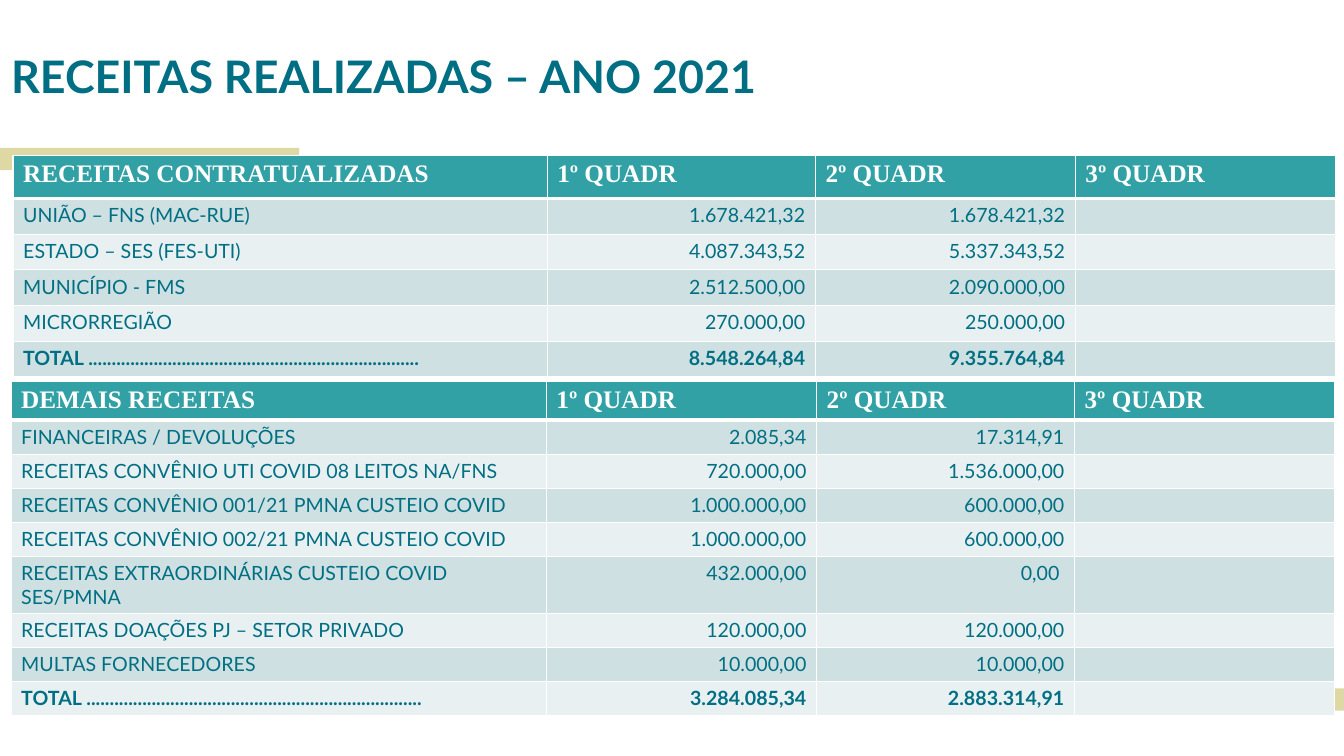
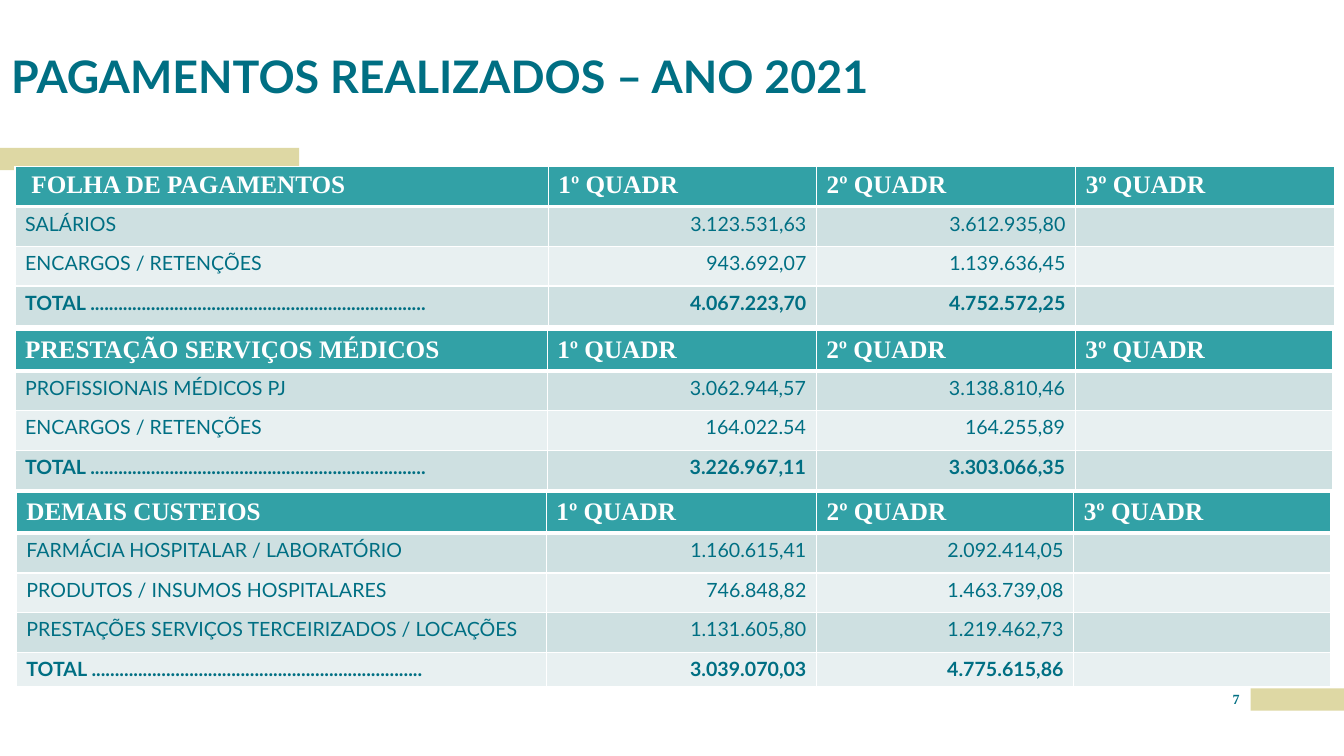
from lxml import etree
from pptx import Presentation
from pptx.dml.color import RGBColor
from pptx.enum import shapes, text
from pptx.oxml.ns import qn
from pptx.util import Cm, Pt

TEAL = RGBColor(0x32, 0xA1, 0xA6)
DARK_TEAL = RGBColor(0x00, 0x6F, 0x83)
SAND = RGBColor(0xDE, 0xD8, 0xA4)
WHITE = RGBColor(0xFF, 0xFF, 0xFF)
BANDS = RGBColor(0xCE, 0xE0, 0xE1), RGBColor(0xE8, 0xF0, 0xF1)
BODY_FONT, HEAD_FONT = "Lato", "Times New Roman"

QUARTERS = ["1º QUADR", "2º QUADR", "3º QUADR"]
SAND_BARS = [(31.52, 17.35, 2.35, 0.56), (0, 3.73, 7.54, 0.56)]

# Lengths in cm; "heights" holds header, body and total rows
SLIDES = [
    {
        "title": "RECEITAS REALIZADAS – ANO 2021",
        "number": None,
        "tables": [
            {
                "head": "RECEITAS CONTRATUALIZADAS",
                "at": (0.33, 3.91),
                "widths": (13.46, 6.76, 6.55, 6.55),
                "heights": (1.09, 0.9, 0.9),
                "rows": [
                    ("UNIÃO – FNS (MAC-RUE)", "1.678.421,32", "1.678.421,32"),
                    ("ESTADO – SES (FES-UTI)", "4.087.343,52", "5.337.343,52"),
                    ("MUNICÍPIO - FMS", "2.512.500,00", "2.090.000,00"),
                    ("MICRORREGIÃO", "270.000,00", "250.000,00"),
                ],
                "total": (71, "8.548.264,84", "9.355.764,84"),
            },
            {
                "head": "DEMAIS RECEITAS",
                "at": (0.28, 9.6),
                "widths": (13.49, 6.81, 6.5, 6.55),
                "heights": (0.99, 0.85, 0.85),
                "rows": [
                    ("FINANCEIRAS / DEVOLUÇÕES", "2.085,34", "17.314,91"),
                    ("RECEITAS CONVÊNIO UTI COVID 08 LEITOS NA/FNS",
                     "720.000,00", "1.536.000,00"),
                    ("RECEITAS CONVÊNIO 001/21 PMNA CUSTEIO COVID",
                     "1.000.000,00", "600.000,00"),
                    ("RECEITAS CONVÊNIO 002/21 PMNA CUSTEIO COVID",
                     "1.000.000,00", "600.000,00"),
                    ("RECEITAS EXTRAORDINÁRIAS CUSTEIO COVID SES/PMNA",
                     "432.000,00", "0,00 "),
                    ("RECEITAS DOAÇÕES PJ – SETOR PRIVADO",
                     "120.000,00", "120.000,00"),
                    ("MULTAS FORNECEDORES", "10.000,00", "10.000,00"),
                ],
                "total": (72, "3.284.085,34", "2.883.314,91"),
            },
        ],
    },
    {
        "title": "PAGAMENTOS REALIZADOS – ANO 2021",
        "number": "7",
        "tables": [
            {
                "head": " FOLHA DE PAGAMENTOS",
                "at": (0.38, 4.19),
                "widths": (13.44, 6.76, 6.53, 6.53),
                "heights": (1, 1, 1),
                "rows": [
                    ("SALÁRIOS", "3.123.531,63", "3.612.935,80"),
                    ("ENCARGOS / RETENÇÕES", "943.692,07", "1.139.636,45"),
                ],
                "total": (72, "4.067.223,70", "4.752.572,25"),
            },
            {
                "head": "PRESTAÇÃO SERVIÇOS MÉDICOS",
                "at": (0.38, 8.33),
                "widths": (13.41, 6.78, 6.53, 6.48),
                "heights": (1, 1, 1),
                "rows": [
                    ("PROFISSIONAIS MÉDICOS PJ", "3.062.944,57", "3.138.810,46"),
                    ("ENCARGOS / RETENÇÕES", "164.022.54", "164.255,89"),
                ],
                "total": (72, "3.226.967,11", "3.303.066,35"),
            },
            {
                "head": "DEMAIS CUSTEIOS",
                "at": (0.41, 12.42),
                "widths": (13.36, 6.81, 6.48, 6.48),
                "heights": (1, 1, 0.86),
                "rows": [
                    ("FARMÁCIA HOSPITALAR / LABORATÓRIO",
                     "1.160.615,41", "2.092.414,05"),
                    ("PRODUTOS / INSUMOS HOSPITALARES",
                     "746.848,82", "1.463.739,08"),
                    ("PRESTAÇÕES SERVIÇOS TERCEIRIZADOS / LOCAÇÕES",
                     "1.131.605,80", "1.219.462,73"),
                ],
                "total": (71, "3.039.070,03", "4.775.615,86"),
            },
        ],
    },
]


def place(sp, left, top, width, height):
    sp.left, sp.top, sp.width, sp.height = map(Cm, (left, top, width, height))


def write(p, content, size, font, color, bold, align):
    p.alignment = align
    r = p.add_run()
    r.text = content
    r.font.size = Pt(size)
    r.font.name = font
    r.font.bold = bold
    r.font.color.rgb = color


def clear_margins(tf):
    tf.margin_left = tf.margin_right = tf.margin_top = tf.margin_bottom = 0


def add_frame(slide, title, number):
    """Add the sand bars, the title and, if given, the slide number."""
    for bar in SAND_BARS:
        sp = slide.shapes.add_shape(shapes.MSO_SHAPE.RECTANGLE, *map(Cm, bar))
        sp.shadow.inherit = False
        sp.fill.solid()
        sp.fill.fore_color.rgb = SAND
        sp.line.fill.background()

    place(slide.shapes.title, 0.28, 0, 23.72, 2.59)
    tf = slide.shapes.title.text_frame
    clear_margins(tf)
    tf.auto_size = text.MSO_AUTO_SIZE.NONE
    tf.vertical_anchor = text.MSO_ANCHOR.BOTTOM
    p = tf.paragraphs[0]
    p.line_spacing = 0.9
    write(p, title, 32, BODY_FONT, DARK_TEAL, True, text.PP_ALIGN.LEFT)

    if number:
        box = slide.shapes.add_textbox(Cm(30.78), Cm(17.4), Cm(0.74), Cm(0.64))
        tf = box.text_frame
        tf.word_wrap = True
        clear_margins(tf)
        write(tf.paragraphs[0], number, 10, HEAD_FONT, DARK_TEAL, True,
              text.PP_ALIGN.CENTER)


def set_borders(cell, top, bottom):
    """Draw white borders, with the top and bottom widths in points."""
    tc_pr = cell._tc.get_or_add_tcPr()
    for side, width in (("L", 1), ("R", 1), ("T", top), ("B", bottom)):
        ln = etree.SubElement(tc_pr, qn(f"a:ln{side}"), w=str(Pt(width)))
        fill = etree.SubElement(ln, qn("a:solidFill"))
        etree.SubElement(fill, qn("a:srgbClr"), val=str(WHITE))


def fill_cell(cell, content, row, col, is_total):
    is_head = row == 0
    set_borders(cell, 3 if row == 1 else 1, 3 if is_head else 1)
    cell.fill.solid()
    cell.fill.fore_color.rgb = TEAL if is_head else BANDS[(row - 1) % 2]
    p = cell.text_frame.paragraphs[0]
    if not content:
        etree.SubElement(p._p, qn("a:endParaRPr"), sz="1400")
    elif is_head:
        write(p, content, 18, HEAD_FONT, WHITE, True, text.PP_ALIGN.LEFT)
    else:
        align = text.PP_ALIGN.RIGHT if col else text.PP_ALIGN.LEFT
        write(p, content, 14, BODY_FONT, DARK_TEAL, is_total, align)


def add_budget_table(slide, data):
    dots, *sums = data["total"]
    rows = [(data["head"], *QUARTERS),
            *((*row, "") for row in data["rows"]),
            ("TOTAL " + "." * dots, *sums, "")]
    head, body, total = data["heights"]
    heights = [head] + [body] * len(data["rows"]) + [total]
    left, top = data["at"]
    frame = slide.shapes.add_table(
        len(rows), len(data["widths"]), Cm(left), Cm(top),
        Cm(sum(data["widths"])), Cm(sum(heights)))
    table = frame.table
    for column, width in zip(table.columns, data["widths"]):
        column.width = Cm(width)
    for i, (row, height) in enumerate(zip(rows, heights)):
        table.rows[i].height = Cm(height)
        for j, content in enumerate(row):
            fill_cell(table.cell(i, j), content, i, j, i == len(rows) - 1)


def main():
    prs = Presentation()
    prs.slide_width, prs.slide_height = Cm(33.87), Cm(19.05)
    for data in SLIDES:
        slide = prs.slides.add_slide(prs.slide_layouts[5])
        add_frame(slide, data["title"], data["number"])
        for table in data["tables"]:
            add_budget_table(slide, table)
    prs.save("out.pptx")


if __name__ == "__main__":
    main()
